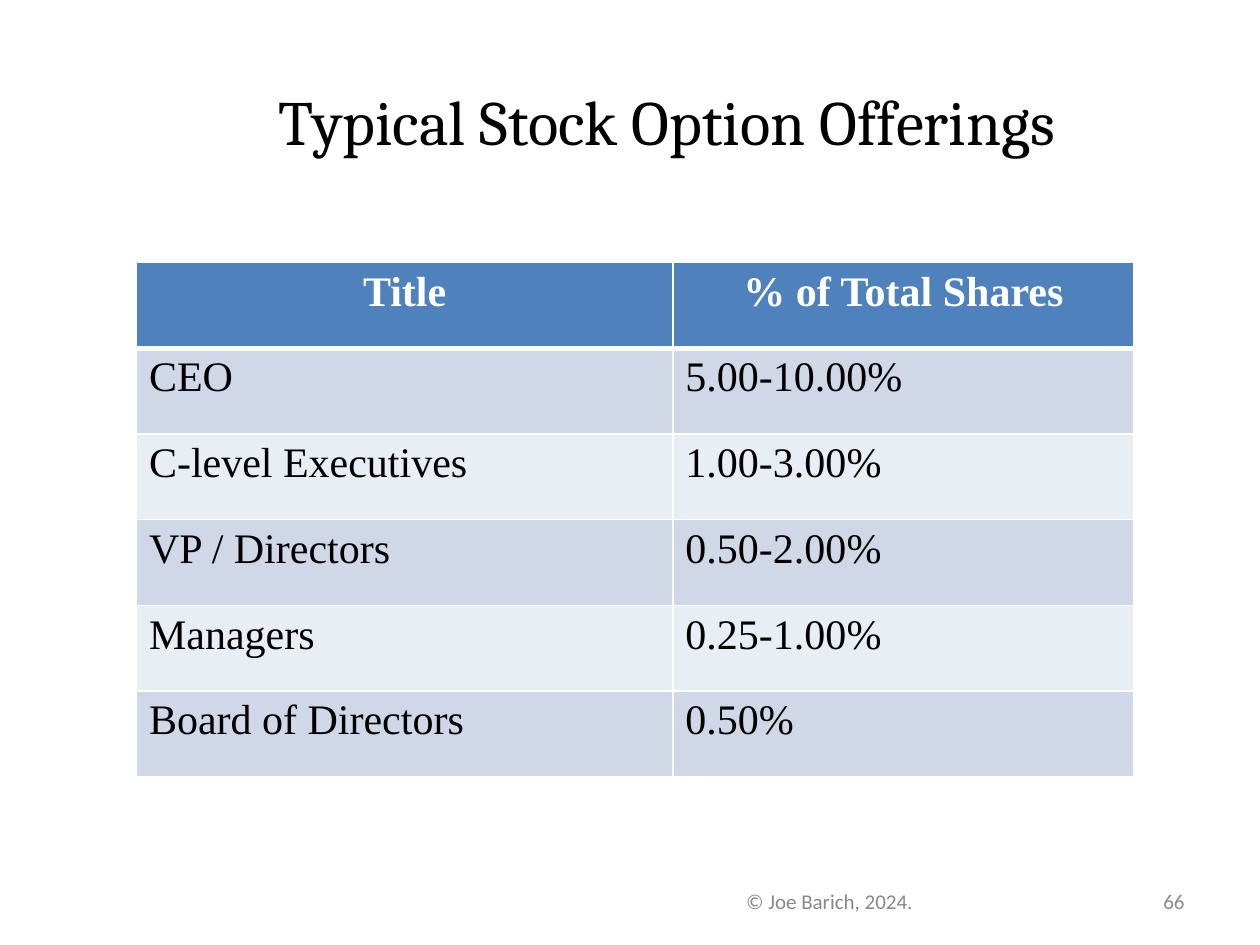
from dataclasses import dataclass

from lxml.etree import SubElement
from pptx import Presentation
from pptx.dml.color import RGBColor
from pptx.enum.text import MSO_ANCHOR, PP_ALIGN
from pptx.oxml.ns import qn
from pptx.util import Pt


@dataclass(frozen=True)
class Theme:
    ink: str = "000000"
    white: str = "FFFFFF"
    head: str = "4F81BD"
    bands: tuple = ("D0D8E8", "E9EDF4")
    note: str = "898989"
    number: str = "8C8C8C"
    title_font: str = "Cambria"
    table_font: str = "Times New Roman"
    note_font: str = "Calibri"
    title_size: int = 36
    table_size: int = 24
    note_size: int = 12


def write(frame, text, *, font, size, color, bold=False,
          align=PP_ALIGN.LEFT, anchor=MSO_ANCHOR.MIDDLE):
    """Put one formatted paragraph in a text frame."""
    frame.word_wrap = True
    frame.vertical_anchor = anchor
    para = frame.paragraphs[0]
    para.alignment = align
    run = para.add_run()
    run.text = text
    run.font.name = font
    run.font.size = Pt(size)
    run.font.bold = bold
    run.font.color.rgb = RGBColor.from_string(color)


def edge(cell, color, **widths):
    """Draw cell borders; call before the fill is set."""
    props = cell._tc.get_or_add_tcPr()
    for side, width in widths.items():
        line = SubElement(props, qn(f"a:ln{side}"), w=str(Pt(width)))
        fill = SubElement(line, qn("a:solidFill"))
        SubElement(fill, qn("a:srgbClr"), val=color)


class Deck:
    def __init__(self, theme):
        self.theme = theme
        self.file = Presentation()
        self.file.slide_width, self.file.slide_height = Pt(720), Pt(540)
        self.slide = None

    def title(self, text, left, top, width, height):
        """Start a title-only slide and place its title."""
        self.slide = self.file.slides.add_slide(self.file.slide_layouts[5])
        shape = self.slide.shapes.title
        shape.left, shape.top = Pt(left), Pt(top)
        shape.width, shape.height = Pt(width), Pt(height)
        look = self.theme
        write(shape.text_frame, text, font=look.title_font,
              size=look.title_size, color=look.ink, align=PP_ALIGN.CENTER)

    def note(self, text, left, top, width, height, color, align):
        box = self.slide.shapes.add_textbox(
            Pt(left), Pt(top), Pt(width), Pt(height))
        look = self.theme
        write(box.text_frame, text, font=look.note_font,
              size=look.note_size, color=color, align=align)

    def table(self, rows, left, top, widths, step):
        grid = self.slide.shapes.add_table(
            len(rows), len(widths), Pt(left), Pt(top),
            Pt(sum(widths)), Pt(step * len(rows))).table
        for column, width in zip(grid.columns, widths):
            column.width = Pt(width)
        for index, row in enumerate(rows):
            grid.rows[index].height = Pt(step)
            for place, text in enumerate(row):
                self.cell(grid.cell(index, place), text, index)

    def cell(self, cell, text, index):
        look = self.theme
        head = index == 0
        # The rule below the header is thicker than the others
        edge(cell, look.white, L=1, R=1,
             T=3 if index == 1 else 1, B=3 if head else 1)
        cell.fill.solid()
        shade = look.head if head else look.bands[(index - 1) % 2]
        cell.fill.fore_color.rgb = RGBColor.from_string(shade)
        write(cell.text_frame, text, font=look.table_font,
              size=look.table_size, bold=head,
              color=look.white if head else look.ink,
              align=PP_ALIGN.CENTER if head else PP_ALIGN.LEFT,
              anchor=MSO_ANCHOR.TOP)


def main():
    theme = Theme()
    deck = Deck(theme)
    deck.title("Typical Stock Option Offerings", 66, 18, 630, 102)

    # Share of stock by role
    offers = [
        ("Title", "% of Total Shares"),
        ("CEO", "5.00-10.00%"),
        ("C-level Executives", "1.00-3.00%"),
        ("VP / Directors", "0.50-2.00%"),
        ("Managers", "0.25-1.00%"),
        ("Board of Directors", "0.50%"),
    ]
    deck.table(offers, 78, 150, (306.5, 263.5), 49)

    # Footer and slide number
    deck.note("© Joe Barich, 2024.", 360, 500.5, 228, 28.75,
              theme.note, PP_ALIGN.CENTER)
    deck.note("66", 600, 500.5, 84, 28.75, theme.number, PP_ALIGN.RIGHT)

    deck.file.save("out.pptx")


if __name__ == "__main__":
    main()
